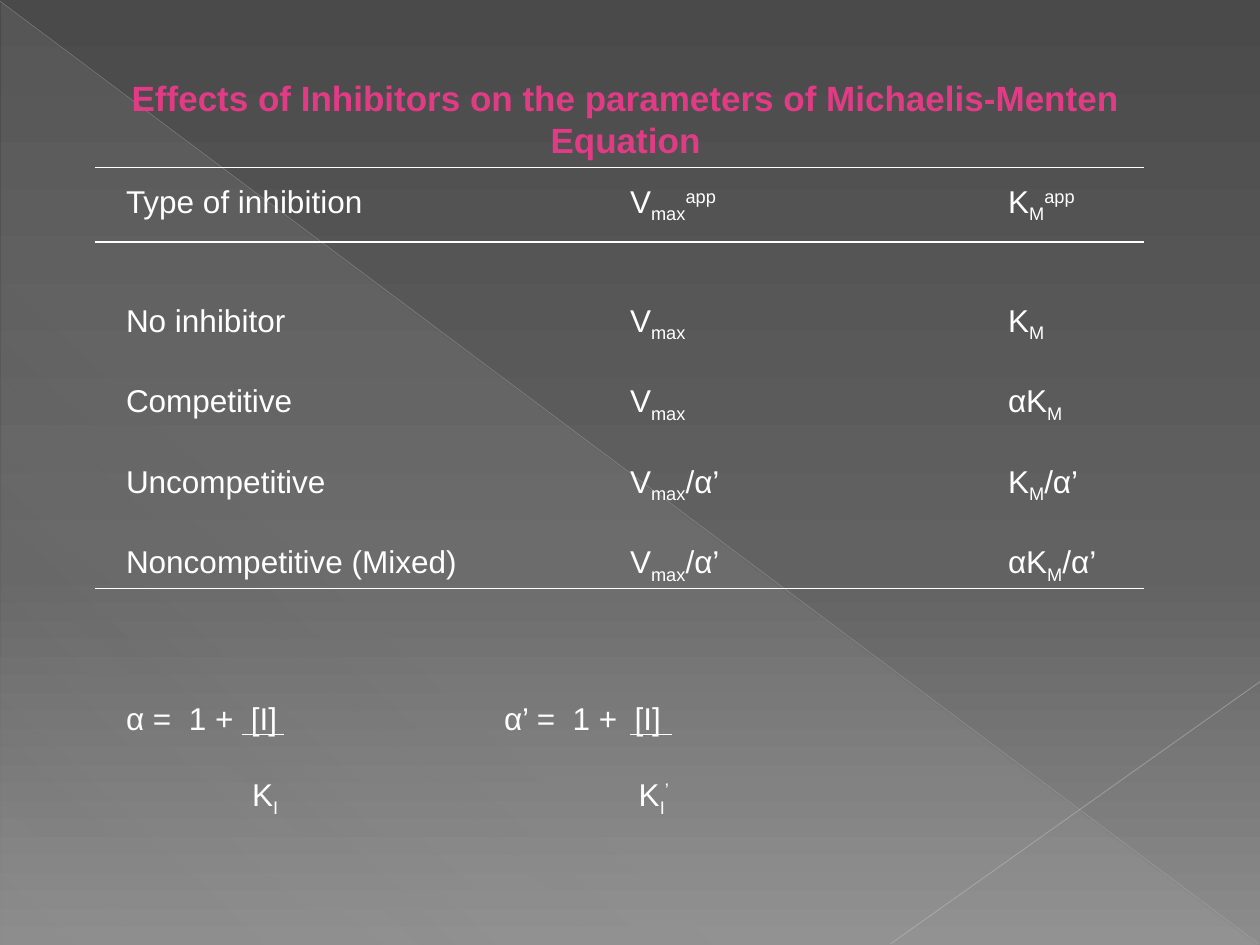
import dataclasses
import typing

import lxml.etree
import pptx
import pptx.dml.color
import pptx.enum.dml
import pptx.enum.shapes
import pptx.enum.text
import pptx.oxml.ns
import pptx.util

Inches = pptx.util.Inches
Pt = pptx.util.Pt
qn = pptx.oxml.ns.qn

COLORS = {
    "title": "E13B86",
    "text": "FFFFFF",
    "rule": "FFFFFF",
    "diagonal": "BFBFBF",
    "corner": "C6C6C6",
    "sheen": "D2D2D2",
    "top": "4A4A4A",
    "middle": "626262",
    "bottom": "8C8C8C",
}
FONT = "Arial"
SUB, SUPER = -25, 30
TAB_WIDTH = str(Inches(1))


class Piece(typing.NamedTuple):
    text: str
    baseline: int = 0


class Stop(typing.NamedTuple):
    position: int
    color: str
    opacity: int = 100


@dataclasses.dataclass
class Rule:
    start: tuple[float, float]
    end: tuple[float, float]
    color: str = "rule"
    width: float = 1
    opacity: int = 100


@dataclasses.dataclass
class TextLine:
    pieces: list[Piece]
    space_before: float


VMAX = [Piece("V"), Piece("max", SUB)]
KM = [Piece("K"), Piece("M", SUB)]
KI = [Piece("K"), Piece("I", SUB)]
APP = [Piece("app", SUPER)]
ALPHA = [Piece("α")]
OVER_ALPHA = [Piece("/α’")]
TABS = [Piece("\t\t\t")]


def row(label: str, vmax: list[Piece], km: list[Piece], gap: float = 25) -> TextLine:
    return TextLine([Piece(label), *vmax, *TABS, *km], gap)


LINES = [
    row("Type of inhibition\t\t\t", VMAX + APP, KM + APP, 0),
    row("No inhibitor\t\t\t", VMAX, KM, 47),
    row("Competitive\t\t\t", VMAX, ALPHA + KM),
    row("Uncompetitive\t\t\t", VMAX + OVER_ALPHA, KM + OVER_ALPHA),
    row("Noncompetitive (Mixed)\t\t", VMAX + OVER_ALPHA, ALPHA + KM + OVER_ALPHA),
    TextLine([Piece("α =  1 +  [I]\t\tα’ =  1 +  [I]")], 65.5),
    TextLine([Piece("\t"), *KI, *TABS, Piece(" "), *KI, Piece("’", SUPER)], 25.5),
]

BACKDROP_RULES = [
    Rule((0, 0.01), (9.99, 7.49), "diagonal", 0.39, 35),
    Rule((10, 5.41), (7.07, 7.49), "corner", 0.47, 45),
]
TABLE_RULES = [Rule((0.75, y), (9.08, y)) for y in (1.33, 1.92, 4.67)]
FRACTION_RULES = [Rule((x, 5.83), (x + 0.33, 5.83)) for x in (1.92, 5)]


def rgb(name: str) -> pptx.dml.color.RGBColor:
    return pptx.dml.color.RGBColor.from_string(COLORS[name])


def add_opacity(color_element, opacity: int) -> None:
    lxml.etree.SubElement(color_element, qn("a:alpha"), val=str(opacity * 1000))


def set_gradient(owner, stops: list[Stop], angle: int) -> None:
    gradient = next(owner.element.iter(qn("a:gradFill")))
    for child in list(gradient):
        gradient.remove(child)
    stop_list = lxml.etree.SubElement(gradient, qn("a:gsLst"))
    for stop in stops:
        entry = lxml.etree.SubElement(stop_list, qn("a:gs"), pos=str(stop.position * 1000))
        color = lxml.etree.SubElement(entry, qn("a:srgbClr"), val=COLORS[stop.color])
        if stop.opacity < 100:
            add_opacity(color, stop.opacity)
    lxml.etree.SubElement(gradient, qn("a:lin"), ang=str(angle * 60000), scaled="0")


def add_rule(slide, rule: Rule) -> None:
    ends = [Inches(value) for value in (*rule.start, *rule.end)]
    line = slide.shapes.add_connector(pptx.enum.shapes.MSO_CONNECTOR.STRAIGHT, *ends)
    line.line.color.rgb = rgb(rule.color)
    line.line.width = Pt(rule.width)
    if rule.opacity < 100:
        add_opacity(next(line.element.iter(qn("a:srgbClr"))), rule.opacity)
    properties = line.element.find(qn("p:spPr"))
    lxml.etree.SubElement(properties, qn("a:effectLst"))


def add_span(para, text: str, *, size: float = 18, color: str = "text",
             bold: bool = False, baseline: int = 0) -> None:
    span = para.add_run()
    span.text = text
    span.font.name = FONT
    span.font.size = Pt(size)
    span.font.bold = bold
    span.font.color.rgb = rgb(color)
    if baseline:
        span.font._element.set("baseline", str(baseline * 1000))


def place_box(slide, box, left: float, top: float, width: float, height: float):
    box.left, box.top = Inches(left), Inches(top)
    box.width, box.height = Inches(width), Inches(height)
    slide.shapes.element.append(box.element)
    frame = box.text_frame
    frame.word_wrap = True
    frame.auto_size = pptx.enum.text.MSO_AUTO_SIZE.NONE
    frame.vertical_anchor = pptx.enum.text.MSO_ANCHOR.TOP
    return frame


def add_line(para, line: TextLine) -> None:
    para.line_spacing = Pt(21)
    para.space_before = Pt(line.space_before)
    para.space_after = Pt(0)
    para.alignment = pptx.enum.text.PP_ALIGN.LEFT
    properties = para._p.get_or_add_pPr()
    properties.set("marL", "0")
    properties.set("indent", "0")
    properties.set("defTabSz", TAB_WIDTH)
    lxml.etree.SubElement(properties, qn("a:buNone"))
    for piece in line.pieces:
        add_span(para, piece.text, baseline=piece.baseline)


def add_backdrop(slide) -> None:
    slide.background.fill.gradient()
    set_gradient(slide, [Stop(0, "top"), Stop(60, "middle"), Stop(100, "bottom")], 90)
    triangle = slide.shapes.add_shape(
        pptx.enum.shapes.MSO_SHAPE.RIGHT_TRIANGLE,
        Inches(0.01), Inches(0.02), Inches(9.98), Inches(7.48),
    )
    triangle.shadow.inherit = False
    triangle.line.fill.background()
    triangle.fill.gradient()
    sheen = [Stop(0, "sheen", 10), Stop(70, "sheen", 8), Stop(100, "sheen", 1)]
    set_gradient(triangle, sheen, 133)
    for rule in BACKDROP_RULES:
        add_rule(slide, rule)


def main() -> None:
    deck = pptx.Presentation()
    deck.slide_width, deck.slide_height = Inches(10), Inches(7.5)
    for level in deck.slide_master.element.iter(qn("a:lvl1pPr")):
        level.set("defTabSz", TAB_WIDTH)
    page = deck.slides.add_slide(deck.slide_layouts[1])
    add_backdrop(page)
    for rule in TABLE_RULES:
        add_rule(page, rule)

    body = place_box(page, page.placeholders[1], 0.9, 1.44, 7.95, 5.71)
    for index, line in enumerate(LINES):
        add_line(body.add_paragraph() if index else body.paragraphs[0], line)

    title = place_box(page, page.shapes.title, 0.65, 0.56, 8.63, 0.77)
    heading = title.paragraphs[0]
    heading.alignment = pptx.enum.text.PP_ALIGN.CENTER
    add_span(heading, "Effects of Inhibitors on the parameters of Michaelis-Menten Equation",
             size=20, color="title", bold=True)

    for rule in FRACTION_RULES:
        add_rule(page, rule)
    deck.save("out.pptx")


if __name__ == "__main__":
    main()
